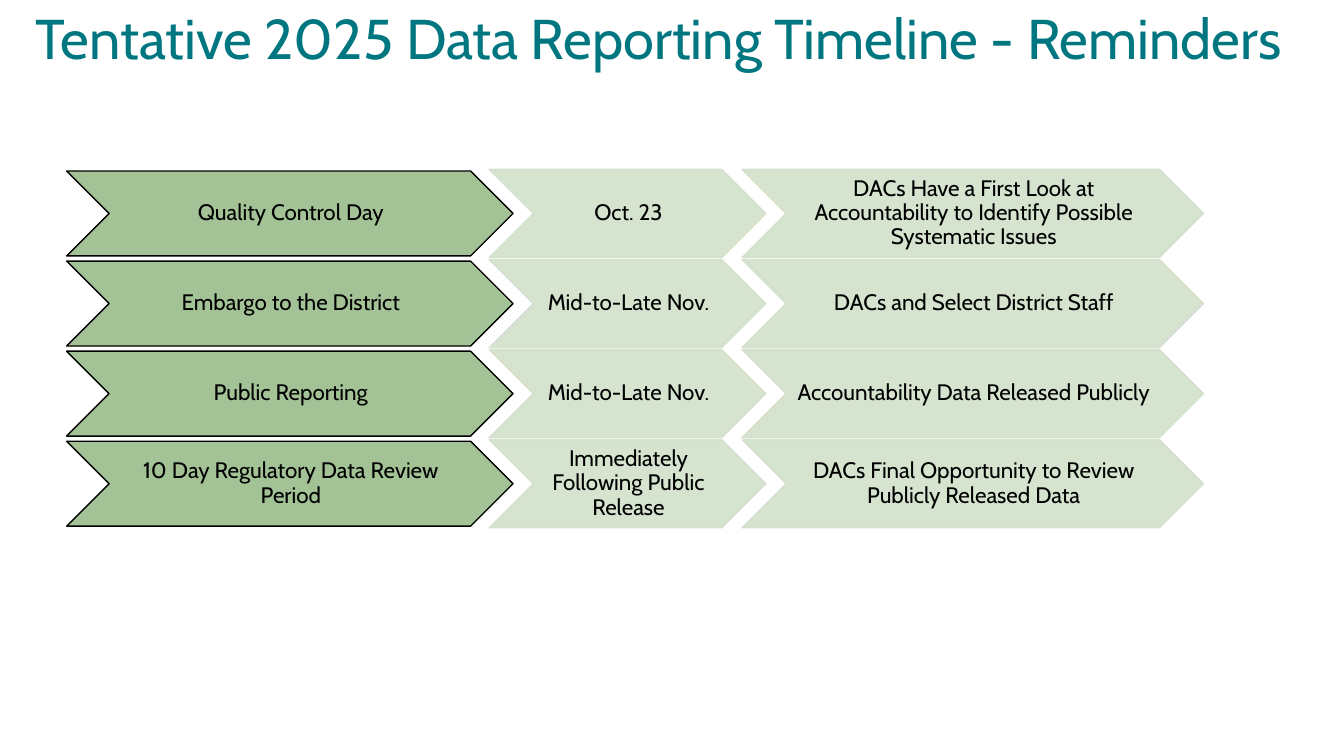
from lxml.etree import SubElement
from pptx import Presentation
from pptx.dml.color import RGBColor
from pptx.enum.shapes import MSO_SHAPE
from pptx.enum.text import MSO_ANCHOR, MSO_AUTO_SIZE, PP_ALIGN
from pptx.oxml.ns import qn
from pptx.util import Cm, Pt

COLORS = {
    "title": "007780",
    "text": "000000",
    "step_fill": "A3C295",
    "step_line": "000000",
    "detail_fill": "D5E3CF",
    "detail_line": "D4DFCD",
}
FONT = "Cabin"
ROW_PITCH = 2.27
COLUMNS = [
    (1.68, 4.31, 11.25, 2.14, "step", 100),
    (12.33, 4.27, 6.97, 2.22, "detail", 90),
    (18.7, 4.27, 11.63, 2.22, "detail", 90),
]
TIMELINE = [
    ("Quality Control Day", "Oct. 23",
     "DACs Have a First Look at Accountability to Identify Possible Systematic Issues"),
    ("Embargo to the District", "Mid-to-Late Nov.", "DACs and Select District Staff"),
    ("Public Reporting", "Mid-to-Late Nov.", "Accountability Data Released Publicly"),
    ("10 Day Regulatory Data Review Period", "Immediately Following Public Release",
     "DACs Final Opportunity to Review Publicly Released Data"),
]


def color(name):
    return RGBColor.from_string(COLORS[name])


def write_text(shape, text, size, color_name, alignment):
    frame = shape.text_frame
    frame.text = text
    frame.word_wrap = True
    frame.auto_size = MSO_AUTO_SIZE.NONE
    frame.vertical_anchor = MSO_ANCHOR.MIDDLE
    paragraph = frame.paragraphs[0]
    paragraph.alignment = alignment
    paragraph.line_spacing = 0.9
    paragraph.space_before = Pt(0)
    font = paragraph.runs[0].font
    font.name = FONT
    font.size = Pt(size)
    font.color.rgb = color(color_name)
    return frame


presentation = Presentation()
presentation.slide_width = Cm(33.87)
presentation.slide_height = Cm(19.05)
slide = presentation.slides.add_slide(presentation.slide_layouts[5])

title = slide.shapes.title
title.left, title.top, title.width, title.height = Cm(0), Cm(-0.79), Cm(33.27), Cm(3.66)
title_frame = write_text(title, "Tentative 2025 Data Reporting Timeline - Reminders",
                         40, "title", PP_ALIGN.LEFT)
title_properties = title_frame.paragraphs[0]._p.get_or_add_pPr()
title_properties.set("marL", str(Cm(0.64)))
title_properties.set("indent", "0")

for row, texts in enumerate(TIMELINE):
    for (left, top, width, height, style, opacity), text in zip(COLUMNS, texts):
        chevron = slide.shapes.add_shape(
            MSO_SHAPE.CHEVRON, Cm(left), Cm(top + row * ROW_PITCH), Cm(width), Cm(height))
        chevron.shadow.inherit = False
        chevron.fill.solid()
        chevron.fill.fore_color.rgb = color(f"{style}_fill")
        chevron.line.color.rgb = color(f"{style}_line")
        chevron.line.width = Pt(1)
        if opacity < 100:
            line_color = chevron.line._ln.find(".//" + qn("a:srgbClr"))
            SubElement(line_color, qn("a:alpha")).set("val", str(opacity * 1000))
        frame = write_text(chevron, text, 16, "text", PP_ALIGN.CENTER)
        frame.margin_left = Cm(0.05)
        frame.margin_right = Cm(0)
        frame.margin_top = frame.margin_bottom = Cm(0.03)

presentation.save("out.pptx")
